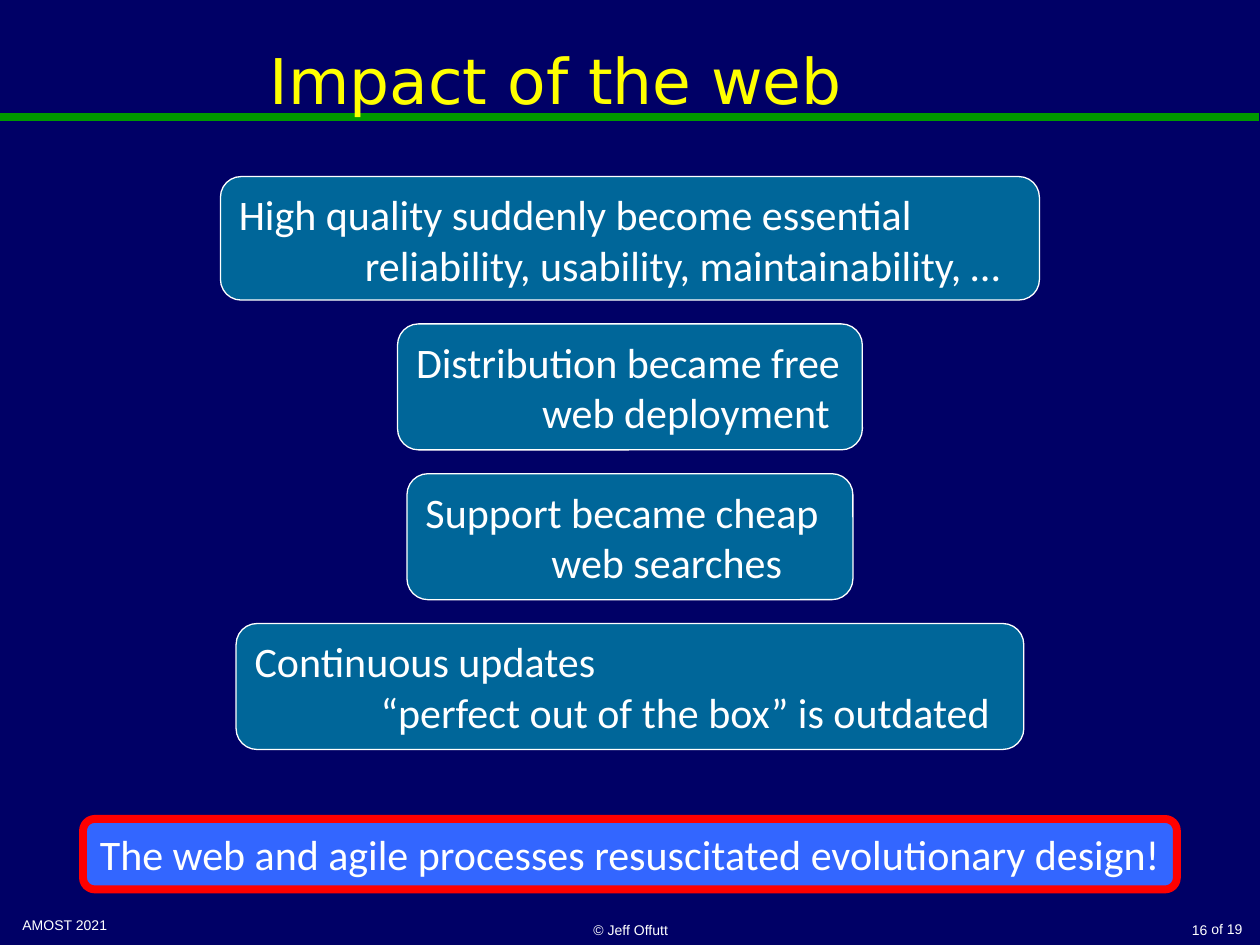
"""Build the slide on the impact of the web on software quality and design."""
from lxml import etree
from pptx import Presentation
from pptx.dml.color import RGBColor
from pptx.enum.shapes import MSO_CONNECTOR, MSO_SHAPE
from pptx.enum.text import MSO_ANCHOR, PP_ALIGN
from pptx.oxml.ns import qn
from pptx.util import Cm, Pt

LEFT, CENTER, RIGHT = PP_ALIGN.LEFT, PP_ALIGN.CENTER, PP_ALIGN.RIGHT
TOP, MIDDLE, BOTTOM = MSO_ANCHOR.TOP, MSO_ANCHOR.MIDDLE, MSO_ANCHOR.BOTTOM
ROUNDED = MSO_SHAPE.ROUNDED_RECTANGLE
STRAIGHT = MSO_CONNECTOR.STRAIGHT
COLORS = {
    "background": "000066",
    "rule": "009900",
    "title": "FFFF00",
    "text": "FFFFFF",
    "impact": "006699",
    "conclusion": "3366FF",
    "border": "FF0000",
}


def write_text(shape, text, font, size, color, alignment, anchor):
    text_frame = shape.text_frame
    text_frame.text = text
    text_frame.word_wrap = True
    text_frame.vertical_anchor = anchor
    for paragraph in text_frame.paragraphs:
        paragraph.alignment = alignment
        for run in paragraph.runs:
            run.font.name = font
            run.font.size = Pt(size)
            run.font.color.rgb = RGBColor.from_string(COLORS[color])


def add_box(top, width, height, fill, line, line_width, text, alignment):
    left = (25.4 - width) / 2
    box = slide.shapes.add_shape(ROUNDED, Cm(left), Cm(top), Cm(width), Cm(height))
    box.shadow.inherit = False
    box.fill.solid()
    box.fill.fore_color.rgb = RGBColor.from_string(COLORS[fill])
    box.line.color.rgb = RGBColor.from_string(COLORS[line])
    box.line.width = Pt(line_width)
    write_text(box, text, "Calibri", 24, "text", alignment, TOP)
    return box


presentation = Presentation()
presentation.slide_width = Cm(25.4)
presentation.slide_height = Cm(19.05)
slide = presentation.slides.add_slide(presentation.slide_layouts[5])
slide.background.fill.solid()
slide.background.fill.fore_color.rgb = RGBColor.from_string(COLORS["background"])

rule = slide.shapes.add_connector(STRAIGHT, Cm(0), Cm(2.36), Cm(25.37), Cm(2.36))
rule.line.color.rgb = RGBColor.from_string(COLORS["rule"])
rule.line.width = Pt(4.5)
etree.SubElement(rule._element.spPr, qn("a:effectLst"))

title = slide.shapes.title
title.left, title.top, title.width, title.height = Cm(0.2), Cm(0), Cm(22.02), Cm(3.18)
write_text(title, "Impact of the web", "DejaVu Sans", 36, "title", CENTER, MIDDLE)
slide.shapes._spTree.append(title._element)

footers = [
    ("AMOST 2021", 0.2, 18.36, 5.92, 0.66, LEFT, TOP),
    ("© Jeff Offutt", 8.69, 18.36, 8.05, 0.69, CENTER, BOTTOM),
    ("16", 19.99, 18.36, 4.6, 0.69, RIGHT, BOTTOM),
    ("of 19", 24.13, 18.44, 1.17, 0.61, RIGHT, TOP),
]
for text, left, top, width, height, alignment, anchor in footers:
    footer = slide.shapes.add_textbox(Cm(left), Cm(top), Cm(width), Cm(height))
    write_text(footer, text, "Arial", 8, "text", alignment, anchor)

impacts = [
    ("High quality suddenly become essential",
     "reliability, usability, maintainability, …", 16.51, 2.49),
    ("Distribution became free", "web deployment", 9.37, 2.54),
    ("Support became cheap", "web searches", 8.99, 2.54),
    ("Continuous updates", "“perfect out of the box” is outdated", 15.88, 2.54),
]
gap = 0.48
top = 3.56
for change, example, width, height in impacts:
    box = add_box(top, width, height, "impact", "text", 0.75,
                  f"{change}\n{example}", LEFT)
    example_properties = box.text_frame.paragraphs[1]._p.get_or_add_pPr()
    example_properties.set("marL", str(Cm(2.54)))
    top += height + gap

add_box(16.51, 22.05, 1.42, "conclusion", "border", 4.5,
        "The web and agile processes resuscitated evolutionary design!", CENTER)

presentation.save("out.pptx")
